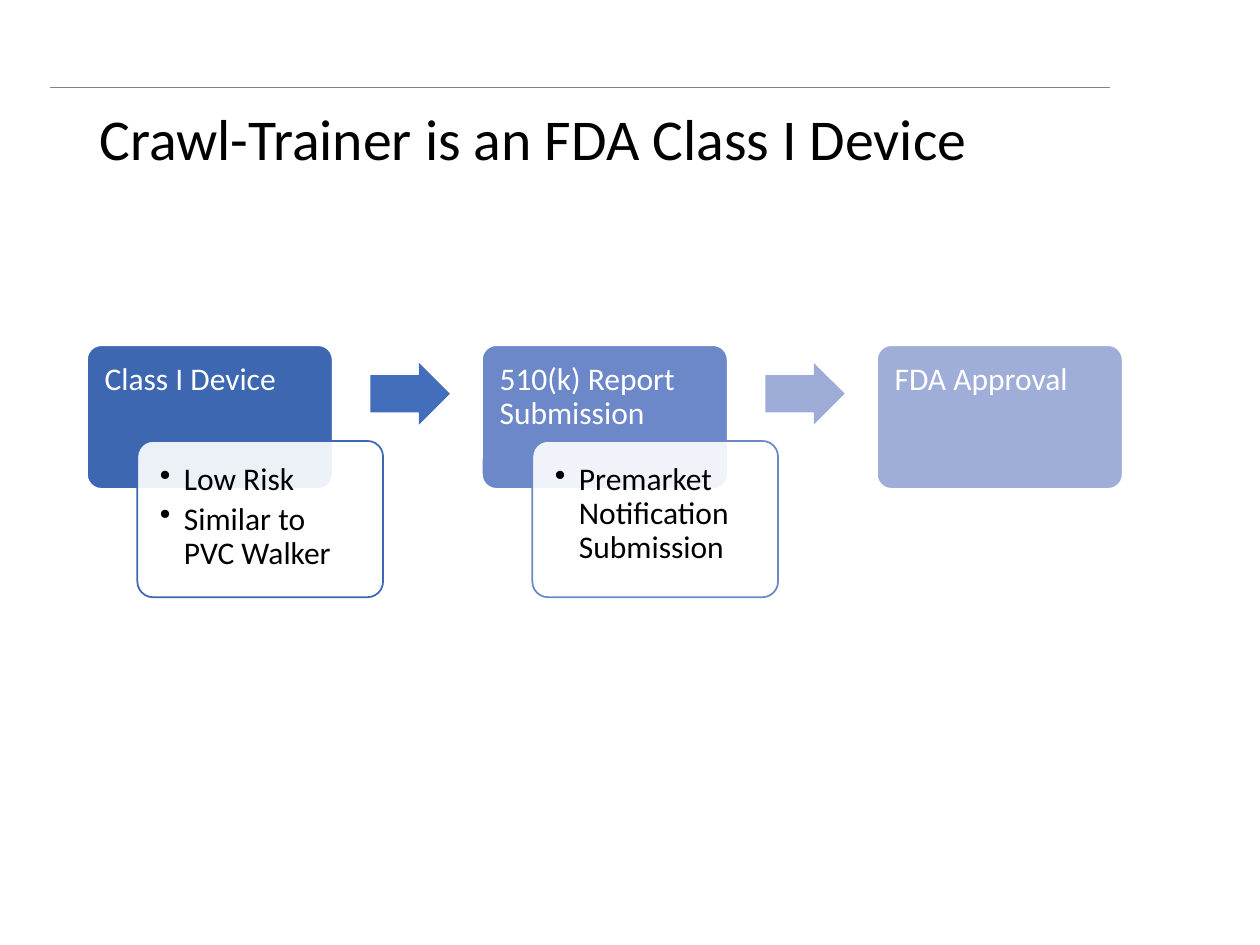
from dataclasses import dataclass
from typing import Optional

from lxml import etree
from pptx import Presentation
from pptx.dml.color import RGBColor
from pptx.enum.shapes import MSO_CONNECTOR, MSO_SHAPE
from pptx.enum.text import MSO_ANCHOR, PP_ALIGN
from pptx.oxml.ns import qn
from pptx.util import Inches, Pt

ROUND = MSO_SHAPE.ROUNDED_RECTANGLE
ARROW = MSO_SHAPE.RIGHT_ARROW
STRAIGHT = MSO_CONNECTOR.STRAIGHT
TOP, MIDDLE = MSO_ANCHOR.TOP, MSO_ANCHOR.MIDDLE
LEFT = PP_ALIGN.LEFT


@dataclass(frozen=True)
class Theme:
    font: str = "Calibri"
    title_size: float = 33
    body_size: float = 18
    black: str = "000000"
    white: str = "FFFFFF"
    rule: str = "808080"


@dataclass(frozen=True)
class Box:
    x: float
    y: float
    w: float
    h: float

    def moved(self, dx: float) -> "Box":
        return Box(self.x + dx, self.y, self.w, self.h)

    def inset(self, d: float) -> "Box":
        return Box(self.x + d, self.y + d, self.w - 2 * d, self.h - 2 * d)

    def emu(self) -> tuple:
        return tuple(Inches(v) for v in (self.x, self.y, self.w, self.h))


@dataclass(frozen=True)
class Step:
    heading: str
    color: str
    details: tuple = ()
    arrow: Optional[str] = None


THEME = Theme()
PITCH = 3.135
HEAD = Box(0.69, 2.74, 1.95, 1.14)
LABEL = Box(0.69, 2.74, 1.95, 0.76)
DETAIL = Box(1.09, 3.5, 1.95, 1.24)
NEXT = Box(2.94, 2.88, 0.63, 0.49)
STEPS = (
    Step("Class I Device", "3E67B2", ("Low Risk", "Similar to PVC Walker"), "416DBB"),
    Step("510(k) Report Submission", "6C88C8",
         ("Premarket Notification Submission",), "9EADD8"),
    Step("FDA Approval", "9FAED8"),
)


def rgb(color: str) -> RGBColor:
    return RGBColor.from_string(color)


def add_run(p, text: str, size: float, color: str) -> None:
    p.alignment = LEFT
    p.line_spacing = 0.9
    r = p.add_run()
    r.text = text
    r.font.name = THEME.font
    r.font.size = Pt(size)
    r.font.color.rgb = rgb(color)


def add_bullet(p) -> None:
    pPr = p._p.get_or_add_pPr()
    pPr.set("marL", str(Inches(0.19)))
    pPr.set("indent", str(Inches(-0.19)))
    etree.SubElement(pPr, qn("a:buChar")).set("char", "•")


def add_preset(slide, kind, box: Box, adj: tuple, fill: str,
               line: Optional[str] = None, alpha: int = 100) -> None:
    sp = slide.shapes.add_shape(kind, *box.emu())
    sp.shadow.inherit = False
    for i, value in enumerate(adj):
        sp.adjustments[i] = value
    sp.fill.solid()
    sp.fill.fore_color.rgb = rgb(fill)
    if alpha < 100:
        clr = sp.fill._xPr.find(".//" + qn("a:srgbClr"))
        etree.SubElement(clr, qn("a:alpha")).set("val", str(alpha * 1000))
    if line:
        sp.line.color.rgb = rgb(line)
        sp.line.width = Pt(1)
    else:
        sp.line.fill.background()


def add_text(slide, box: Box, lines: tuple, color: str, bottom: float,
             bulleted: bool = False) -> None:
    tf = slide.shapes.add_textbox(*box.emu()).text_frame
    tf.word_wrap = True
    tf.vertical_anchor = TOP
    tf.margin_left = tf.margin_top = tf.margin_right = Inches(0.14)
    tf.margin_bottom = Inches(bottom)
    for i, text in enumerate(lines):
        p = tf.add_paragraph() if i else tf.paragraphs[0]
        if bulleted:
            add_bullet(p)
            p.space_after = Pt(3)
        add_run(p, text, THEME.body_size, color)


def add_step(slide, step: Step, dx: float) -> None:
    add_preset(slide, ROUND, HEAD.moved(dx), (0.1,), step.color, THEME.white)
    add_text(slide, LABEL.moved(dx), (step.heading,), THEME.white, 0.07)
    if step.details:
        box = DETAIL.moved(dx)
        add_preset(slide, ROUND, box, (0.1,), THEME.white, step.color, 90)
        add_text(slide, box.inset(0.04), step.details, THEME.black, 0.14, True)
    if step.arrow:
        add_preset(slide, ARROW, NEXT.moved(dx), (0.6, 0.5), step.arrow)


def add_rule(slide) -> None:
    y = Inches(0.69)
    line = slide.shapes.add_connector(STRAIGHT, Inches(0.4), y, Inches(8.81), y)
    line.line.color.rgb = rgb(THEME.rule)
    line.line.width = Pt(0.25)
    etree.SubElement(line._element.spPr, qn("a:effectLst"))


def add_title(slide, text: str) -> None:
    title = slide.shapes.title
    title.left, title.top, title.width, title.height = Box(0.69, 0.4, 8.62, 1.45).emu()
    tf = title.text_frame
    tf.word_wrap = True
    tf.vertical_anchor = MIDDLE
    add_run(tf.paragraphs[0], text, THEME.title_size, THEME.black)


def main() -> None:
    prs = Presentation()
    prs.slide_width, prs.slide_height = Inches(10), Inches(7.5)
    slide = prs.slides.add_slide(prs.slide_layouts[5])
    add_rule(slide)
    add_title(slide, "Crawl-Trainer is an FDA Class I Device")
    for i, step in enumerate(STEPS):
        add_step(slide, step, i * PITCH)
    prs.save("out.pptx")


if __name__ == "__main__":
    main()
